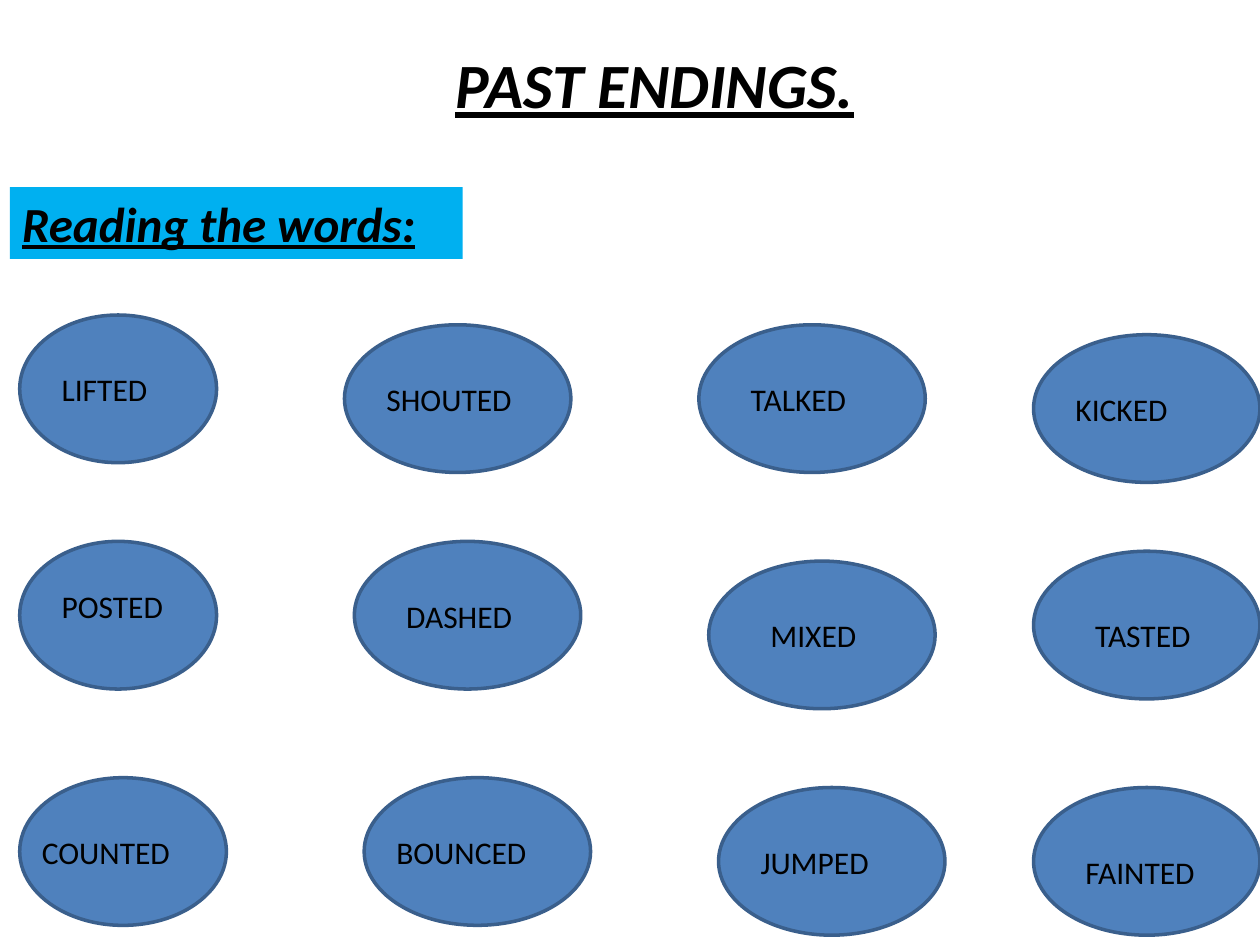
from pptx import Presentation
from pptx.dml.color import RGBColor
from pptx.enum.shapes import MSO_SHAPE
from pptx.enum.text import MSO_AUTO_SIZE, PP_ALIGN
from pptx.util import Inches, Pt

OVAL = MSO_SHAPE.OVAL
FIT = MSO_AUTO_SIZE.SHAPE_TO_FIT_TEXT
LEFT, CENTER = PP_ALIGN.LEFT, PP_ALIGN.CENTER

BLACK = RGBColor(0x00, 0x00, 0x00)
CYAN = RGBColor(0x00, 0xB0, 0xF0)
BLUE = RGBColor(0x4F, 0x81, 0xBD)
NAVY = RGBColor(0x3A, 0x5F, 0x8C)

WIDTH, HEIGHT = Inches(10), Inches(7.5)
COLS, ROWS = 128, 96
TALL = 15
LINE = 5.12

WORDS = [
    ("LIFTED", (2, 32, 20), (3, 5, 17)),
    ("SHOUTED", (35, 33, 23), (3, 5, 19)),
    ("TALKED", (71, 33, 23), (4, 5, 17)),
    ("KICKED", (105, 34, 23), (3, 5, 18)),
    ("POSTED", (2, 55, 20), (3, 4, 18)),
    ("DASHED", (36, 55, 23), (4, 5, 21)),
    ("MIXED", (72, 57, 23), (5, 5, 16)),
    ("TASTED", (105, 56, 23), (5, 6, 18)),
    ("COUNTED", (2, 79, 21), (1, 5, 17)),
    ("BOUNCED", (37, 79, 23), (2, 5, 20)),
    ("JUMPED", (73, 80, 23), (3, 5, 20)),
    ("FAINTED", (105, 80, 23), (4, 6, 17)),
]


def cells(x, y, w, h):
    col, row = WIDTH / COLS, HEIGHT / ROWS
    return [round(n) for n in (x * col, y * row, w * col, h * row)]


def label(slide, box, text, size, align=LEFT, strong=False):
    shape = slide.shapes.add_textbox(*cells(*box))
    frame = shape.text_frame
    frame.word_wrap = True
    frame.auto_size = FIT
    para = frame.paragraphs[0]
    para.alignment = align
    run = para.add_run()
    run.text = text
    font = run.font
    font.name, font.size = "Calibri", Pt(size)
    font.color.rgb = BLACK
    if strong:
        font.bold = font.italic = font.underline = True
    return shape


def title(slide, box):
    label(slide, box, "PAST ENDINGS.", 36, CENTER, True)


def banner(slide, box):
    shape = label(slide, box, "Reading the words:", 28, strong=True)
    shape.fill.solid()
    shape.fill.fore_color.rgb = CYAN


def bubble(slide, box, word, inset):
    oval = slide.shapes.add_shape(OVAL, *cells(*box))
    oval.shadow.inherit = False
    oval.fill.solid()
    oval.fill.fore_color.rgb = BLUE
    oval.line.color.rgb = NAVY
    oval.line.width = Pt(2)
    x, y = box[:2]
    dx, dy, wide = inset
    label(slide, (x + dx, y + dy, wide, LINE), word, 18)


def main():
    deck = Presentation()
    deck.slide_width, deck.slide_height = WIDTH, HEIGHT
    slide = deck.slides.add_slide(deck.slide_layouts[6])
    title(slide, (5, 4, 123, 9))
    banner(slide, (1, 19, 46, 7.3))
    for word, place, inset in WORDS:
        bubble(slide, (*place, TALL), word, inset)
    deck.save("out.pptx")


if __name__ == "__main__":
    main()
